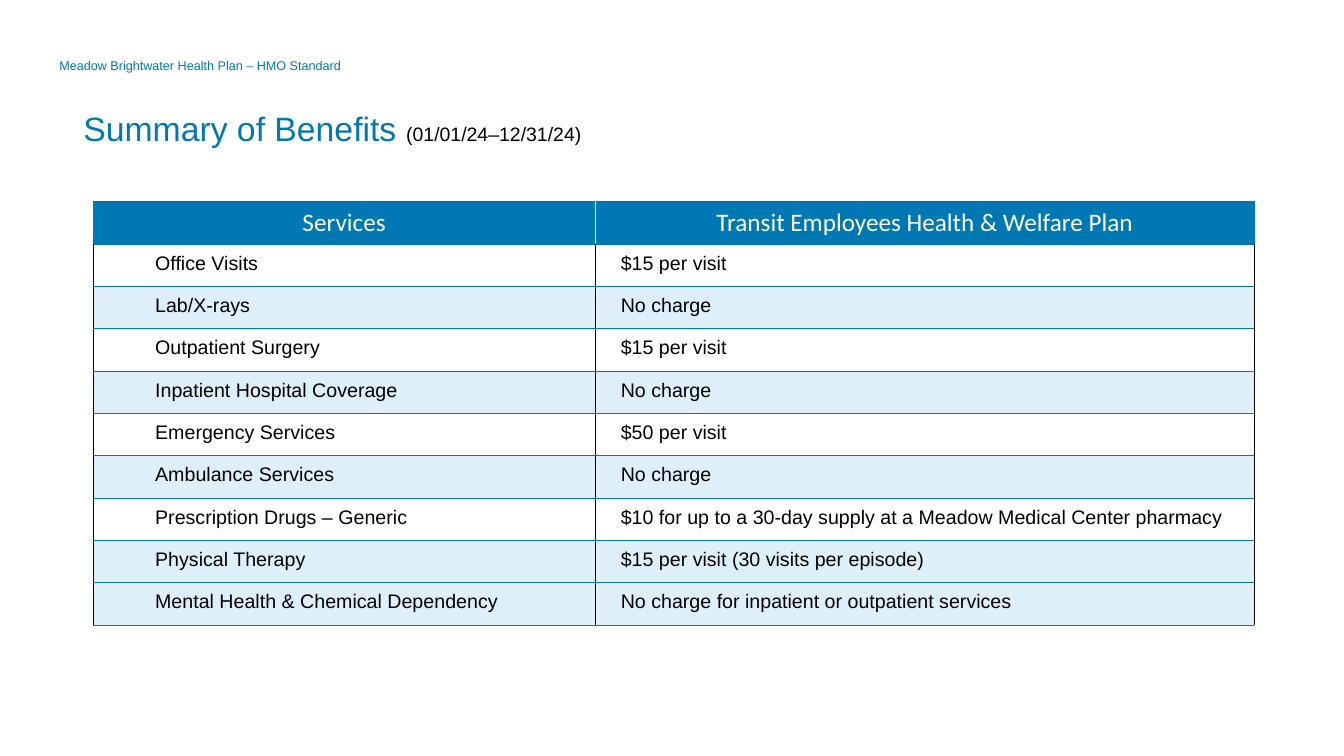
from lxml import etree
from pptx import Presentation
from pptx import util as u
from pptx.dml.color import RGBColor
from pptx.enum import text
from pptx.oxml import ns

BLUE, PALE, BLACK, WHITE = "0078B3", "DEEFFA", "000000", "FFFFFF"
HEADINGS = ["Services", "Transit Employees Health & Welfare Plan"]
BENEFITS = [
    ("Office Visits", "$15 per visit"),
    ("Lab/X-rays", "No charge"),
    ("Outpatient Surgery", "$15 per visit"),
    ("Inpatient Hospital Coverage", "No charge"),
    ("Emergency Services", "$50 per visit"),
    ("Ambulance Services", "No charge"),
    ("Prescription Drugs – Generic",
     "$10 for up to a 30-day supply at a Meadow Medical Center pharmacy"),
    ("Physical Therapy", "$15 per visit (30 visits per episode)"),
    ("Mental Health & Chemical Dependency",
     "No charge for inpatient or outpatient services"),
]
COLUMN_WIDTHS = [359.25, 470.2]
COLUMN_INDENTS = [44.64, 18]


def color(hex_code):
    return RGBColor.from_string(hex_code)


def add_text(para, words, size=14, font="Arial", fill=BLACK):
    span = para.add_run()
    span.text = words
    span.font.size = u.Pt(size)
    span.font.name = font
    span.font.bold = False
    span.font.color.rgb = color(fill)


def add_line_box(page, box, line_spacing):
    """Add a bottom-anchored text box and return its paragraph."""
    frame = page.shapes.add_textbox(*map(u.Pt, box)).text_frame
    frame.word_wrap = True
    frame.vertical_anchor = text.MSO_ANCHOR.BOTTOM
    frame.paragraphs[0].line_spacing = line_spacing
    return frame.paragraphs[0]


def set_borders(cell, **sides):
    """Draw the sides L, R, T and B, each given as (colour, width)."""
    properties = cell._tc.get_or_add_tcPr()
    drawn = [side for side in "LRTB" if side in sides]
    for position, side in enumerate(drawn):
        hex_code, width = sides[side]
        line = etree.Element(ns.qn(f"a:ln{side}"), w=str(u.Pt(width)))
        fill = etree.SubElement(line, ns.qn("a:solidFill"))
        etree.SubElement(fill, ns.qn("a:srgbClr"), val=hex_code)
        properties.insert(position, line)


def format_cell(cell, fill, top=0):
    cell.margin_left = cell.margin_right = cell.margin_bottom = 0
    cell.margin_top = u.Pt(top)
    if fill:
        cell.fill.solid()
        cell.fill.fore_color.rgb = color(fill)
    else:
        cell.fill.background()


def add_header(page, box):
    para = add_line_box(page, box, 0.9)
    add_text(para, "Meadow Brightwater Health Plan – HMO Standard", size=9, fill=BLUE)


def add_title(page, box):
    para = add_line_box(page, box, 0.7)
    add_text(para, "Summary of Benefits ", size=24.1, fill=BLUE)
    add_text(para, "(01/01/24–12/31/24)", size=13.9)


def add_benefits(page, box):
    table = page.shapes.add_table(len(BENEFITS) + 1, 2, *map(u.Pt, box)).table
    table.first_row = table.horz_banding = False
    for column, width in zip(table.columns, COLUMN_WIDTHS):
        column.width = u.Pt(width)

    # Heading row
    divider, rule, edge = (WHITE, 1), (BLUE, 0.25), (BLACK, 0.25)
    for index, words in enumerate(HEADINGS):
        cell = table.cell(0, index)
        format_cell(cell, BLUE)
        cell.vertical_anchor = text.MSO_ANCHOR.MIDDLE
        para = cell.text_frame.paragraphs[0]
        para.alignment = text.PP_ALIGN.CENTER
        add_text(para, words, size=18, font="Calibri", fill=WHITE)
        inner = {"R": divider} if index == 0 else {"L": divider}
        outer = {"L": rule} if index == 0 else {"R": rule}
        set_borders(cell, T=rule, B=rule, **inner, **outer)

    # Benefit rows: every second one shaded, and the last
    for number, benefit in enumerate(BENEFITS, 1):
        shaded = number % 2 == 0 or number == len(BENEFITS)
        for index, words in enumerate(benefit):
            cell = table.cell(number, index)
            format_cell(cell, PALE if shaded else None, top=6.2)
            para = cell.text_frame.paragraphs[0]
            para._p.get_or_add_pPr().set("marL", str(u.Pt(COLUMN_INDENTS[index])))
            add_text(para, words)
            set_borders(cell, L=edge, R=edge, T=rule, B=rule)


def main():
    deck = Presentation()
    deck.slide_width, deck.slide_height = u.Pt(960), u.Pt(540)
    page = deck.slides.add_slide(deck.slide_layouts[6])
    add_title(page, (52.5, 79.2, 643, 29.5))
    add_header(page, (35.3, 26.6, 224.6, 29.5))
    add_benefits(page, (66.2, 144, sum(COLUMN_WIDTHS), 302.4))
    deck.save("out.pptx")


if __name__ == "__main__":
    main()
